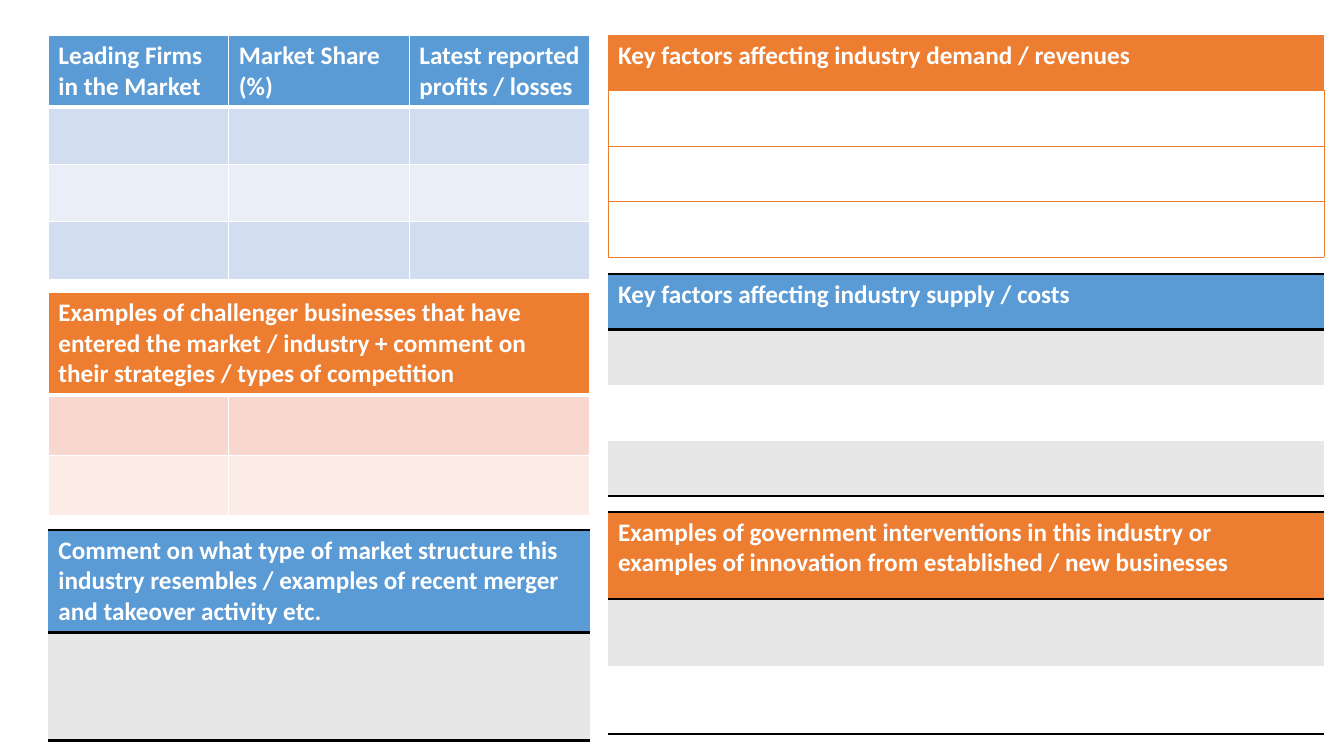
from dataclasses import dataclass

from lxml.etree import SubElement
from pptx import Presentation
from pptx.dml.color import RGBColor
from pptx.oxml.ns import qn
from pptx.util import Inches, Pt


@dataclass(frozen=True)
class Theme:
    font: str = "Calibri"
    heading_size: int = 18
    white: str = "FFFFFF"
    black: str = "000000"
    blue: str = "5B9BD5"
    orange: str = "ED7D31"
    blue_bands: tuple = ("D2DEEF", "EAEFF7")
    orange_bands: tuple = ("F8D7CE", "FCECE8")
    grey_bands: tuple = ("E7E7E7", "FFFFFF")
    no_bands: tuple = (None,)


THEME = Theme()
LEFT_X, LEFT_COLUMN = 0.48, 1.79
RIGHT_X, RIGHT_COLUMNS = 6.03, (3.55, 3.55)

PANELS = [
    dict(headings=["Leading Firms in the Market", "Market Share (%)",
                   "Latest reported profits / losses"],
         at=(LEFT_X, 0.35), columns=(LEFT_COLUMN,) * 3, rows=(0.71,) + (0.57,) * 3,
         colour=THEME.blue, bands=THEME.blue_bands, lines="grid"),
    dict(headings=["Examples of challenger businesses that have entered the market / "
                   "industry + comment on their strategies / types of competition"],
         at=(LEFT_X, 2.9), columns=(LEFT_COLUMN, 2 * LEFT_COLUMN), rows=(1.01, 0.6, 0.6),
         colour=THEME.orange, bands=THEME.orange_bands, lines="grid"),
    dict(headings=["Key factors affecting industry demand / revenues"],
         at=(RIGHT_X, 0.35), columns=RIGHT_COLUMNS, rows=(0.55,) * 4,
         colour=THEME.orange, bands=THEME.no_bands, lines="boxed rows"),
    dict(headings=["Key factors affecting industry supply / costs"],
         at=(RIGHT_X, 2.72), columns=RIGHT_COLUMNS, rows=(0.55,) * 4,
         colour=THEME.blue, bands=THEME.grey_bands, lines="ruled"),
    dict(headings=["Examples of government interventions in this industry or examples "
                   "of innovation from established / new businesses"],
         at=(RIGHT_X, 5.08), columns=RIGHT_COLUMNS, rows=(0.86, 0.67, 0.67),
         colour=THEME.orange, bands=THEME.grey_bands, lines="ruled"),
    dict(headings=["Comment on what type of market structure this industry resembles / "
                   "examples of recent merger and takeover activity etc."],
         at=(LEFT_X, 5.26), columns=(3 * LEFT_COLUMN,), rows=(1.01, 1.07),
         colour=THEME.blue, bands=THEME.grey_bands, lines="ruled"),
]


def cell_edges(lines, row, column, last_row, last_column):
    """Give (colour, points) or None for the left, right, top and bottom edges."""
    if lines == "grid":
        thin, thick = (THEME.white, 1), (THEME.white, 3)
        return (thin, thin, thick if row == 1 else thin, thick if row == 0 else thin)
    if lines == "boxed rows":
        line = (THEME.orange, 0.5)
        return (line if column == 0 else None,
                line if column == last_column else None, line, line)
    rule = (THEME.black, 2)
    return (None, None, rule if row <= 1 else None,
            rule if row in (0, last_row) else None)


def set_edges(cell, edges):
    properties = cell._tc.get_or_add_tcPr()
    for side, edge in zip(("lnL", "lnR", "lnT", "lnB"), edges):
        line = SubElement(properties, qn(f"a:{side}"))
        if edge is None:
            line.set("w", "0")
            SubElement(line, qn("a:noFill"))
        else:
            colour, points = edge
            line.set("w", str(int(Pt(points))))
            fill = SubElement(line, qn("a:solidFill"))
            SubElement(fill, qn("a:srgbClr")).set("val", colour)


def set_fill(cell, colour):
    if colour is None:
        cell.fill.background()
    else:
        cell.fill.solid()
        cell.fill.fore_color.rgb = RGBColor.from_string(colour)


def write_heading(cell, heading):
    cell.text_frame.text = heading
    font = cell.text_frame.paragraphs[0].runs[0].font
    font.name, font.size, font.bold = THEME.font, Pt(THEME.heading_size), True
    font.color.rgb = RGBColor.from_string(THEME.white)


def add_panel(slide, headings, at, columns, rows, colour, bands, lines):
    left, top = at
    table = slide.shapes.add_table(
        len(rows), len(columns), Inches(left), Inches(top),
        Inches(sum(columns)), Inches(sum(rows))).table
    table.first_row = table.horz_banding = False
    for column, width in zip(table.columns, columns):
        column.width = Inches(width)
    for row, height in enumerate(rows):
        table.rows[row].height = Inches(height)
        for column in range(len(columns)):
            cell = table.cell(row, column)
            set_edges(cell, cell_edges(lines, row, column, len(rows) - 1, len(columns) - 1))
            set_fill(cell, bands[(row - 1) % len(bands)] if row else colour)
    if len(headings) < len(columns):
        table.cell(0, 0).merge(table.cell(0, len(columns) - 1))
    for column, heading in enumerate(headings):
        write_heading(table.cell(0, column), heading)


def main():
    deck = Presentation()
    deck.slide_width, deck.slide_height = Inches(13.33), Inches(7.5)
    slide = deck.slides.add_slide(deck.slide_layouts[6])
    for panel in PANELS:
        add_panel(slide, **panel)
    deck.save("out.pptx")


if __name__ == "__main__":
    main()
